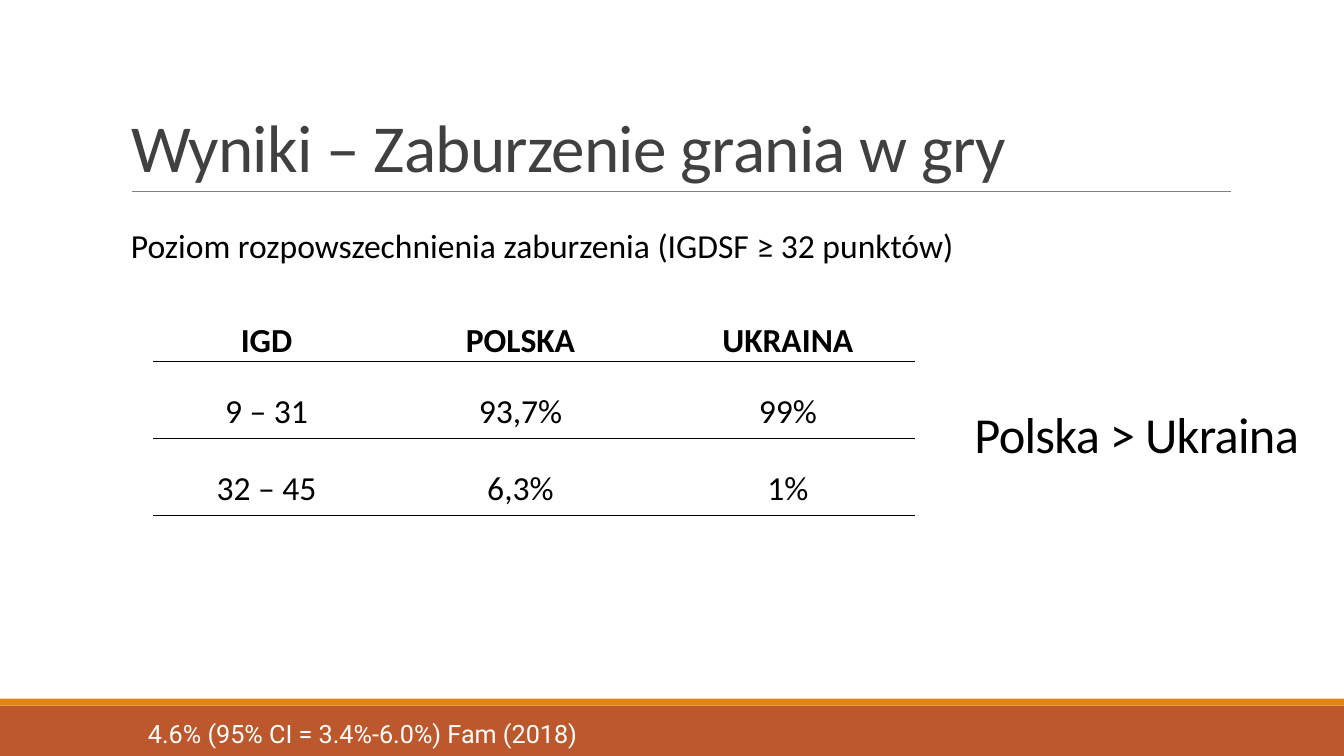
from lxml.etree import SubElement
from pptx import Presentation
from pptx.dml.color import RGBColor
from pptx.enum.shapes import MSO_CONNECTOR, MSO_SHAPE
from pptx.enum.text import MSO_ANCHOR, PP_ALIGN
from pptx.oxml import parse_xml
from pptx.oxml.ns import nsdecls, qn
from pptx.util import Pt

BLACK = RGBColor(0x00, 0x00, 0x00)
WHITE = RGBColor(0xFF, 0xFF, 0xFF)
TITLE_GREY = RGBColor(0x40, 0x40, 0x40)
RULE_GREY = RGBColor(0x80, 0x80, 0x80)
RUST = RGBColor(0xBD, 0x58, 0x2C)
ORANGE = RGBColor(0xE4, 0x83, 0x12)

SLIDE_WIDTH, SLIDE_HEIGHT = 960, 540
NO_STYLE = "{2D5ABB26-0587-4C30-8999-92F81FD0307C}"

PREVALENCE = [
    ("IGD", "POLSKA", "UKRAINA"),
    ("9 – 31", "93,7%", "99%"),
    ("32 – 45", "6,3%", "1%"),
]
COLUMN_WIDTHS = (162, 200.8, 181.2)
ROW_HEIGHTS = (45.4, 55, 55)


def write(frame, text, size, color, font="Calibri", bold=False, tight=False):
    """Fill a text frame with one formatted paragraph and return it."""
    frame.text = text
    frame.word_wrap = True
    paragraph = frame.paragraphs[0]
    run = paragraph.runs[0]
    run.font.name = font
    run.font.size = Pt(size)
    run.font.bold = bold
    run.font.color.rgb = color
    if tight:
        paragraph.line_spacing = 0.85
        run.font._element.set("spc", "-50")
    return paragraph


def add_text(slide, left, top, width, height, text, size, color, **style):
    box = slide.shapes.add_textbox(Pt(left), Pt(top), Pt(width), Pt(height))
    return write(box.text_frame, text, size, color, **style)


def add_bar(slide, top, height, color):
    bar = slide.shapes.add_shape(
        MSO_SHAPE.RECTANGLE, 0, Pt(top), Pt(SLIDE_WIDTH), Pt(height))
    bar.shadow.inherit = False
    bar.fill.solid()
    bar.fill.fore_color.rgb = color
    bar.line.fill.background()


def add_footer(slide, top, height):
    stripe = 5
    add_bar(slide, top + stripe, height - stripe, RUST)
    add_bar(slide, top, stripe, ORANGE)
    add_text(slide, 98.6, top + 10.8, 480, 29,
             "4.6% (95% CI = 3.4%-6.0%) Fam (2018)", 18, WHITE, font="Roboto")


def add_heading(slide, left, top, width, height):
    title = slide.shapes.title
    title.left, title.top = Pt(left), Pt(top)
    title.width, title.height = Pt(width), Pt(height)
    title.text_frame.vertical_anchor = MSO_ANCHOR.BOTTOM
    paragraph = write(title.text_frame, "Wyniki – Zaburzenie grania w gry",
                      48, TITLE_GREY, tight=True)
    paragraph.alignment = PP_ALIGN.LEFT

    rule_left, rule_top = left + 7.9, top + height
    rule = slide.shapes.add_connector(
        MSO_CONNECTOR.STRAIGHT, Pt(rule_left), Pt(rule_top),
        Pt(rule_left + 784.8), Pt(rule_top))
    rule.line.color.rgb = RULE_GREY
    rule.line.width = Pt(0.5)
    SubElement(rule._element.spPr, qn("a:effectLst"))


def underline_cell(cell):
    border = parse_xml(
        f'<a:lnB {nsdecls("a")} w="{Pt(1)}"><a:solidFill>'
        f'<a:srgbClr val="{BLACK}"/></a:solidFill></a:lnB>')
    cell._tc.get_or_add_tcPr().insert(0, border)


def add_prevalence_table(slide, left, top):
    table = slide.shapes.add_table(
        len(ROW_HEIGHTS), len(COLUMN_WIDTHS), Pt(left), Pt(top),
        Pt(sum(COLUMN_WIDTHS)), Pt(sum(ROW_HEIGHTS))).table
    table.horz_banding = False
    table._tbl.tblPr.find(qn("a:tableStyleId")).text = NO_STYLE
    for column, width in zip(table.columns, COLUMN_WIDTHS):
        column.width = Pt(width)
    for row, height, values in zip(table.rows, ROW_HEIGHTS, PREVALENCE):
        row.height = Pt(height)
        for cell, value in zip(row.cells, values):
            cell.fill.background()
            cell.vertical_anchor = MSO_ANCHOR.MIDDLE
            cell.margin_left = cell.margin_right = cell.margin_top = Pt(1.5)
            cell.margin_bottom = 0
            paragraph = write(cell.text_frame, value, 24, BLACK,
                              bold=values is PREVALENCE[0])
            paragraph.alignment = PP_ALIGN.CENTER
            paragraph.line_spacing = 1.5
            underline_cell(cell)


def build_results_slide(presentation):
    slide = presentation.slides.add_slide(presentation.slide_layouts[5])
    add_footer(slide, 499, SLIDE_HEIGHT - 499)
    add_heading(slide, 86.4, 22.4, 792, 114.2)
    add_text(slide, 86.4, 157, 718.6, 36,
             "Poziom rozpowszechnienia zaburzenia (IGDSF ≥ 32 punktów)",
             24, BLACK)
    add_prevalence_table(slide, 109.4, 213.1)
    comparison = add_text(slide, 689, 290.9, 248.4, 44.6,
                          "Polska > Ukraina", 36, BLACK, tight=True)
    comparison.space_after = Pt(6)


def main():
    presentation = Presentation()
    presentation.slide_width = Pt(SLIDE_WIDTH)
    presentation.slide_height = Pt(SLIDE_HEIGHT)
    build_results_slide(presentation)
    presentation.save("out.pptx")


if __name__ == "__main__":
    main()
